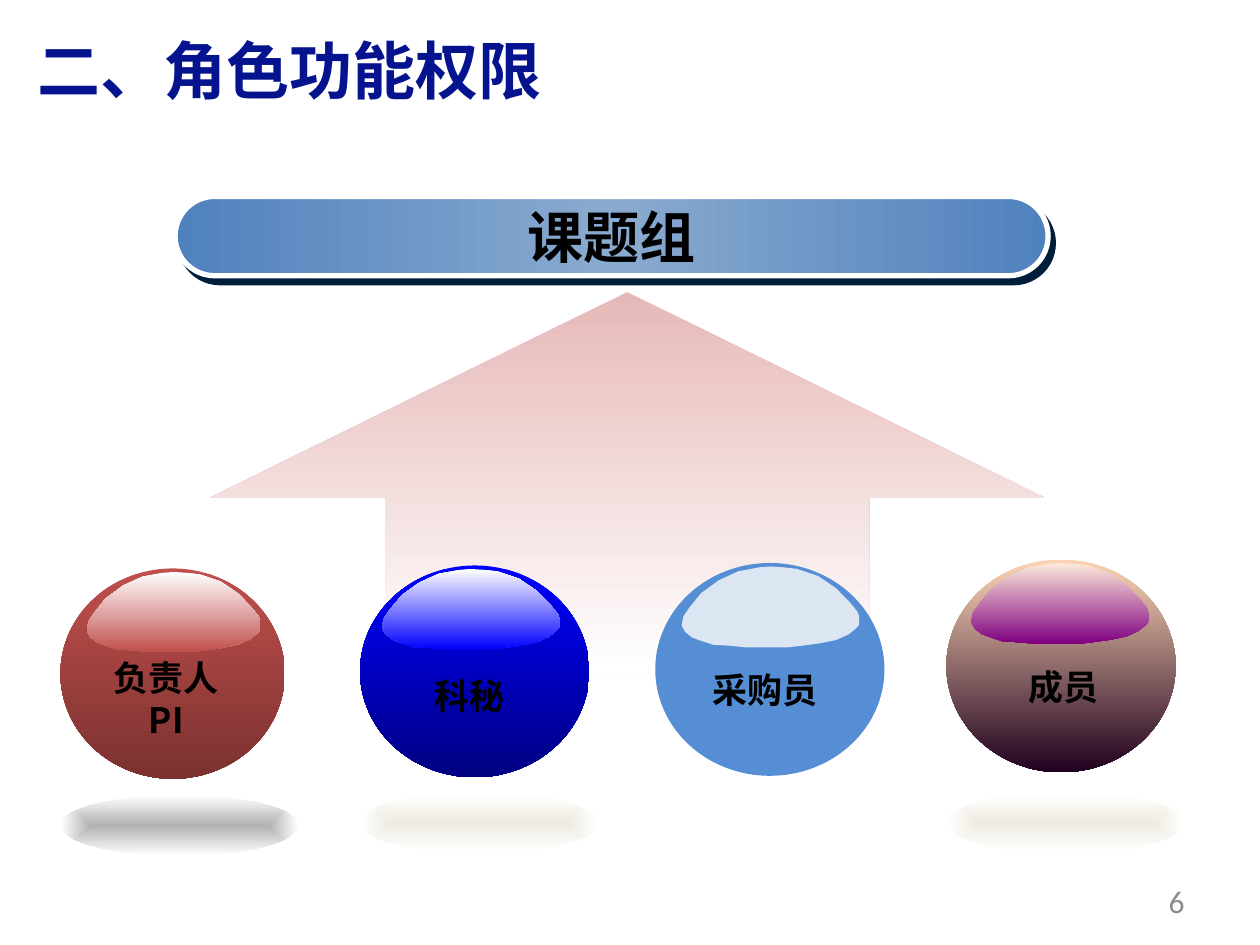
from dataclasses import dataclass

from pptx import Presentation
from pptx.dml.color import RGBColor
from pptx.enum.shapes import MSO_SHAPE as Shape
from pptx.enum.text import MSO_ANCHOR as Anchor, PP_ALIGN as Align
from pptx.oxml import parse_xml
from pptx.oxml.ns import nsdecls, qn
from pptx.util import Cm, Pt


@dataclass(frozen=True)
class Theme:
    font: str = "Noto Sans CJK SC"
    number_font: str = "Calibri"
    title: str = "05148E"
    text: str = "000000"
    number: str = "8C8C8C"
    bar: tuple = ("4F81BD", "8AABD0", "4F81BD")
    bar_line: str = "FFFFFF"
    bar_shadow: str = "001D3A"
    arrow: tuple = ("E6B9B8", "FFFFFF")
    title_size: int = 36
    bar_size: int = 32
    label_size: int = 20
    number_size: int = 18


theme = Theme()


def paint(shape, colors, angle=90, from_center=False):
    """Fill with evenly spaced gradient colours, without outline or shadow."""
    shape.shadow.inherit = False
    shape.line.fill.background()
    if len(colors) == 1:
        shape.fill.solid()
        shape.fill.fore_color.rgb = RGBColor.from_string(colors[0])
        return
    stops = "".join(
        f'<a:gs pos="{100000 * i // (len(colors) - 1)}"><a:srgbClr val="{color}"/></a:gs>'
        for i, color in enumerate(colors)
    )
    if from_center:
        direction = ('<a:path path="shape"><a:fillToRect l="50000" t="50000" '
                     'r="50000" b="50000"/></a:path>')
    else:
        direction = f'<a:lin ang="{angle * 60000}" scaled="1"/>'
    shape.fill.gradient()
    properties = shape.element.spPr
    properties.replace(
        properties.find(qn("a:gradFill")),
        parse_xml(f'<a:gradFill {nsdecls("a")} rotWithShape="1">'
                  f'<a:gsLst>{stops}</a:gsLst>{direction}</a:gradFill>'),
    )


def write(shape, text, size, color, align=Align.CENTER, bold=True,
          font=theme.font, wrap=False, spacing=None):
    frame = shape.text_frame
    frame.text = text
    frame.word_wrap = wrap
    frame.vertical_anchor = Anchor.MIDDLE
    for paragraph in frame.paragraphs:
        paragraph.alignment = align
        paragraph.line_spacing = spacing
        for run in paragraph.runs:
            run.font.name = font
            run.font.size = Pt(size)
            run.font.bold = bold
            run.font.color.rgb = RGBColor.from_string(color)
            run.font.element.append(
                parse_xml(f'<a:ea {nsdecls("a")} typeface="{font}"/>')
            ) if hasattr(run.font, "element") else run._r.get_or_add_rPr().append(
                parse_xml(f'<a:ea {nsdecls("a")} typeface="{font}"/>')
            )


presentation = Presentation()
presentation.slide_width, presentation.slide_height = Cm(25.4), Cm(19.05)
slide = presentation.slides.add_slide(presentation.slide_layouts[6])
shapes = slide.shapes

title = shapes.add_textbox(Cm(0.51), Cm(0.79), Cm(14.17), Cm(1.4))
write(title, "二、角色功能权限", theme.title_size, theme.title, Align.LEFT,
      wrap=True, spacing=0.9)

arrow = shapes.add_shape(Shape.UP_ARROW, Cm(4.24), Cm(5.89), Cm(16.81), Cm(7.67))
arrow.adjustments[0], arrow.adjustments[1] = 0.58, 0.54
paint(arrow, theme.arrow)

bar = shapes.add_shape(Shape.ROUNDED_RECTANGLE, Cm(3.53), Cm(3.96), Cm(17.6), Cm(1.6))
bar.adjustments[0] = 0.5
paint(bar, theme.bar, angle=0)
bar.line.color.rgb = RGBColor.from_string(theme.bar_line)
bar.line.width = Pt(3)
bar.element.spPr.find(qn("a:effectLst")).append(parse_xml(
    f'<a:outerShdw {nsdecls("a")} dist="{Pt(5)}" dir="{53 * 60000}" algn="ctr" '
    f'rotWithShape="0"><a:srgbClr val="{theme.bar_shadow}"/></a:outerShdw>'))
write(bar, "课题组", theme.bar_size, theme.text)

# Outline of the gloss on a ball, in percent of its box
gloss_outline = [
    (99, 56), (100, 62), (100, 72), (98, 77), (94, 84), (87, 91), (78, 95),
    (68, 98), (60, 100), (36, 100), (27, 98), (18, 97), (11, 92), (6, 88),
    (2, 81), (0, 73), (1, 62), (4, 52), (11, 33), (21, 17), (32, 6), (44, 1),
    (50, 0), (57, 1), (65, 3), (77, 12), (87, 27), (95, 45),
]

# Text, ball box, gloss left, label centre, ball colours, gloss colours, floor shadow
balls = [
    ("负责人\nPI", (1.22, 11.46, 4.52, 4.24), 1.75, (3.35, 14.09),
     ("C0504D", "7B312F"), ("FFFFFF", "C0504D"), ("B2B2B2", 16.03)),
    ("科秘", (7.26, 11.4, 4.62, 4.27), 7.7, (9.47, 14.02),
     ("0000FF", "000080"), ("FFFFFF", "0000FF"), ("EEECE1", 15.98)),
    ("采购员", (13.21, 11.35, 4.62, 4.29), 13.74, (15.43, 13.9),
     ("558ED5",), ("DCE6F2",), None),
    ("成员", (19.08, 11.28, 4.62, 4.29), 19.58, (21.45, 13.84),
     ("FCD5B5", "20001E"), ("FDEADA", "800080"), ("EEECE1", 15.98)),
]
label_width, label_height = 4, 2

for text, box, gloss_left, center, ball_colors, gloss_colors, floor in balls:
    left, top, width, height = box
    ball = shapes.add_shape(Shape.OVAL, *map(Cm, box))
    paint(ball, ball_colors)

    scale = (Cm(width * 0.775) / 100, Cm(height * 0.38) / 100)
    builder = shapes.build_freeform(*gloss_outline[0], scale=scale)
    builder.add_line_segments(gloss_outline[1:], close=True)
    gloss = builder.convert_to_shape(Cm(gloss_left), Cm(top + 0.07))
    paint(gloss, gloss_colors)

    label = shapes.add_textbox(Cm(center[0] - label_width / 2),
                               Cm(center[1] - label_height / 2),
                               Cm(label_width), Cm(label_height))
    write(label, text, theme.label_size, theme.text, spacing=Pt(24))

    if floor:
        floor_color, floor_top = floor
        shadow = shapes.add_shape(Shape.OVAL, Cm(left), Cm(floor_top), Cm(4.8), Cm(1.22))
        paint(shadow, (floor_color, "FFFFFF"), from_center=True)

number = shapes.add_textbox(Cm(18.21), Cm(17.65), Cm(5.92), Cm(1.02))
write(number, "6", theme.number_size, theme.number, Align.RIGHT, bold=False,
      font=theme.number_font, wrap=True)

presentation.save("out.pptx")
